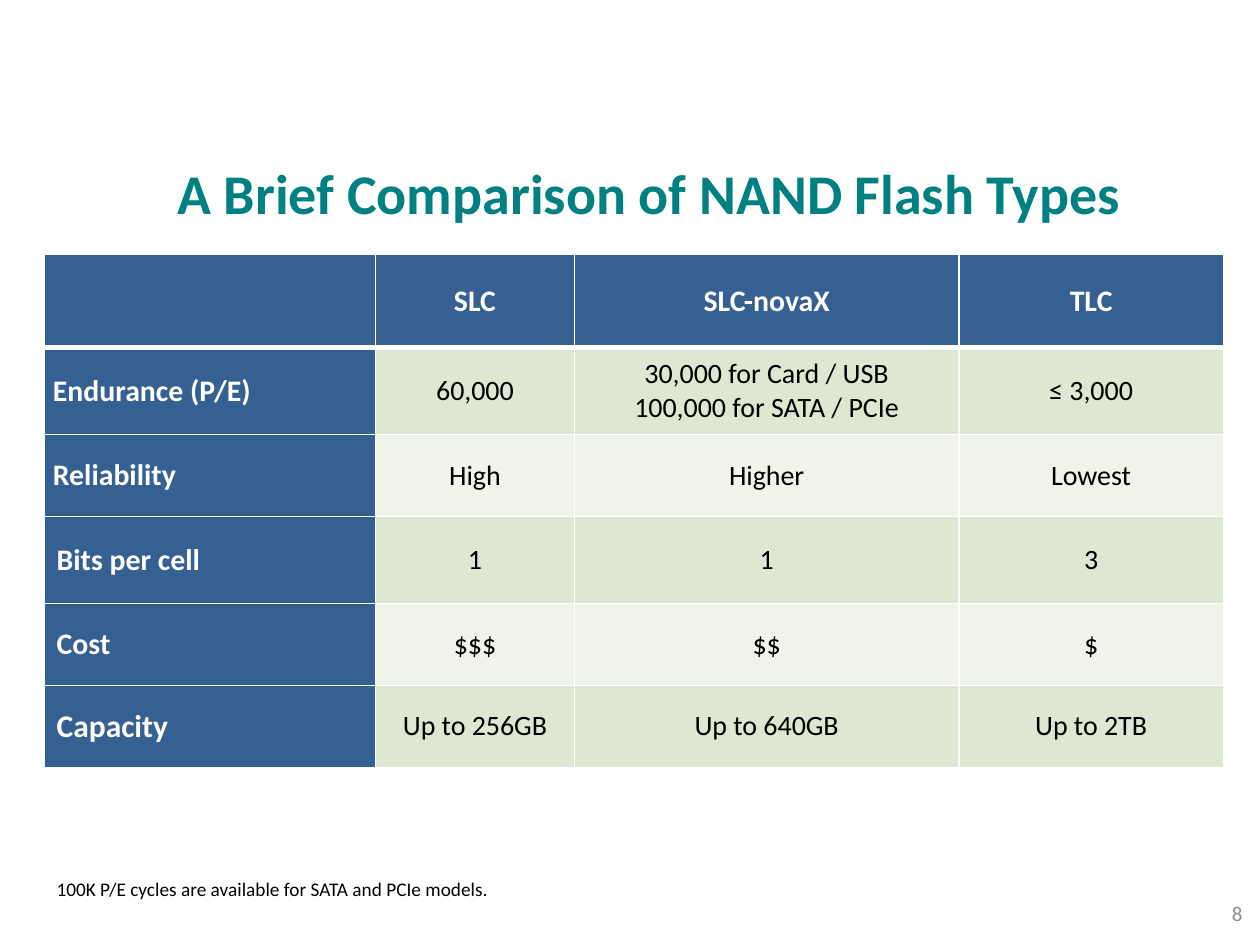
"""Build a slide that compares types of NAND flash."""
from dataclasses import dataclass

from lxml import etree
from pptx import Presentation
from pptx.dml.color import RGBColor
from pptx.enum.text import MSO_ANCHOR, MSO_AUTO_SIZE, PP_ALIGN
from pptx.oxml.ns import qn
from pptx.util import Pt

PX = 9144
FONT = "Calibri"
TEAL = RGBColor(0x00, 0x80, 0x80)
BLUE = RGBColor(0x37, 0x60, 0x92)
SAGE = RGBColor(0xDE, 0xE7, 0xD1)
PALE = RGBColor(0xEF, 0xF3, 0xEA)
WHITE = RGBColor(0xFF, 0xFF, 0xFF)
BLACK = RGBColor(0x00, 0x00, 0x00)
GRAY = RGBColor(0x8C, 0x8C, 0x8C)
LEFT, CENTER, RIGHT = PP_ALIGN.LEFT, PP_ALIGN.CENTER, PP_ALIGN.RIGHT
TOP, MIDDLE = MSO_ANCHOR.TOP, MSO_ANCHOR.MIDDLE
FIT, FIXED = MSO_AUTO_SIZE.SHAPE_TO_FIT_TEXT, MSO_AUTO_SIZE.NONE


@dataclass
class Style:
    size: int
    color: RGBColor
    bold: bool = False
    align: PP_ALIGN = CENTER


@dataclass
class Row:
    height: int
    texts: tuple
    pad: tuple = (10, 0)
    size: int = 17


@dataclass
class Note:
    box: tuple
    text: str
    style: Style
    frame: dict


COLS = (263, 158, 305, 210)
ROWS = (
    Row(74, ("", "SLC", "SLC-novaX", "TLC"), (7, 3)),
    Row(69, ("Endurance (P/E)", "60,000",
             "30,000 for Card / USB\n100,000 for SATA / PCIe", "≤ 3,000"), (7, 3)),
    Row(65, ("Reliability", "High", "Higher", "Lowest"), (7, 3)),
    Row(69, ("Bits per cell", "1", "1", "3")),
    Row(65, ("Cost", "$$$", "$$", "$")),
    Row(65, ("Capacity", "Up to 256GB", "Up to 640GB", "Up to 2TB"), size=18),
)
NOTES = (
    Note((763, 705, 233, 40), "8", Style(12, GRAY, align=RIGHT),
         {"word_wrap": True, "auto_size": FIXED, "vertical_anchor": MIDDLE}),
    Note((35, 691, 369, 29), "100K P/E cycles are available for SATA and PCIe models.",
         Style(11, BLACK, align=LEFT),
         {"word_wrap": False, "auto_size": FIT, "vertical_anchor": TOP}),
)


def apply(item, values: dict) -> None:
    """Set each named value on the item."""
    for name, value in values.items():
        setattr(item, name, value)


def place(shape, box: tuple) -> None:
    """Move and size a shape in px."""
    apply(shape, dict(zip(("left", "top", "width", "height"), (n * PX for n in box))))


def write(frame, text: str, style: Style) -> None:
    """Fill a text frame and format its paragraphs."""
    frame.text = text
    for para in frame.paragraphs:
        para.alignment = style.align
        apply(para.font, {"name": FONT, "size": Pt(style.size), "bold": style.bold})
        para.font.color.rgb = style.color


def edge(cell, widths: dict) -> None:
    """Draw white cell borders with widths in points."""
    props = cell._tc.get_or_add_tcPr()
    for spot, (side, width) in enumerate(widths.items()):
        line = etree.Element(qn(f"a:ln{side}"), w=str(Pt(width)))
        fill = etree.SubElement(line, qn("a:solidFill"))
        etree.SubElement(fill, qn("a:srgbClr"), val=str(WHITE))
        props.insert(spot, line)


def draw_cell(cell, row: Row, r: int, c: int) -> None:
    """Fill and format one table cell."""
    head = r == 0 or c == 0
    align = CENTER if c else LEFT
    style = Style(row.size, WHITE, True, align) if head else Style(16, BLACK)
    write(cell.text_frame, row.texts[c], style)
    side, end = (n * PX for n in row.pad)
    apply(cell, {"margin_left": side, "margin_right": side, "margin_top": end,
                 "margin_bottom": end, "vertical_anchor": MIDDLE})
    cell.fill.solid()
    cell.fill.fore_color.rgb = BLUE if head else SAGE if r % 2 else PALE
    edge(cell, {"L": 1, "R": 1, "T": 3 if r == 1 else 1, "B": 1 if r else 3})


def draw_table(slide) -> None:
    """Add the table of flash types."""
    box = (35, 202, sum(COLS), sum(row.height for row in ROWS))
    grid = slide.shapes.add_table(len(ROWS), len(COLS), *(n * PX for n in box)).table
    for col, width in zip(grid.columns, COLS):
        col.width = width * PX
    for r, row in enumerate(ROWS):
        grid.rows[r].height = row.height * PX
        for c in range(len(COLS)):
            draw_cell(grid.cell(r, c), row, r, c)


def draw_note(slide, note: Note) -> None:
    """Add a small text box."""
    shape = slide.shapes.add_textbox(0, 0, 0, 0)
    write(shape.text_frame, note.text, note.style)
    apply(shape.text_frame, note.frame)
    place(shape, note.box)


def main() -> None:
    """Build and save the slide."""
    deck = Presentation()
    apply(deck, {"slide_width": 1000 * PX, "slide_height": 750 * PX})
    slide = deck.slides.add_slide(deck.slide_layouts[5])
    title = slide.shapes.title
    place(title, (61, 122, 909, 63))
    write(title.text_frame, "A Brief Comparison of NAND Flash Types", Style(32, TEAL, True))
    apply(title.text_frame, {"word_wrap": True, "auto_size": FIT, "vertical_anchor": TOP,
                             "margin_left": 9 * PX, "margin_right": 9 * PX,
                             "margin_top": 4 * PX, "margin_bottom": 4 * PX})
    draw_table(slide)
    for note in NOTES:
        draw_note(slide, note)
    deck.save("out.pptx")


if __name__ == "__main__":
    main()
